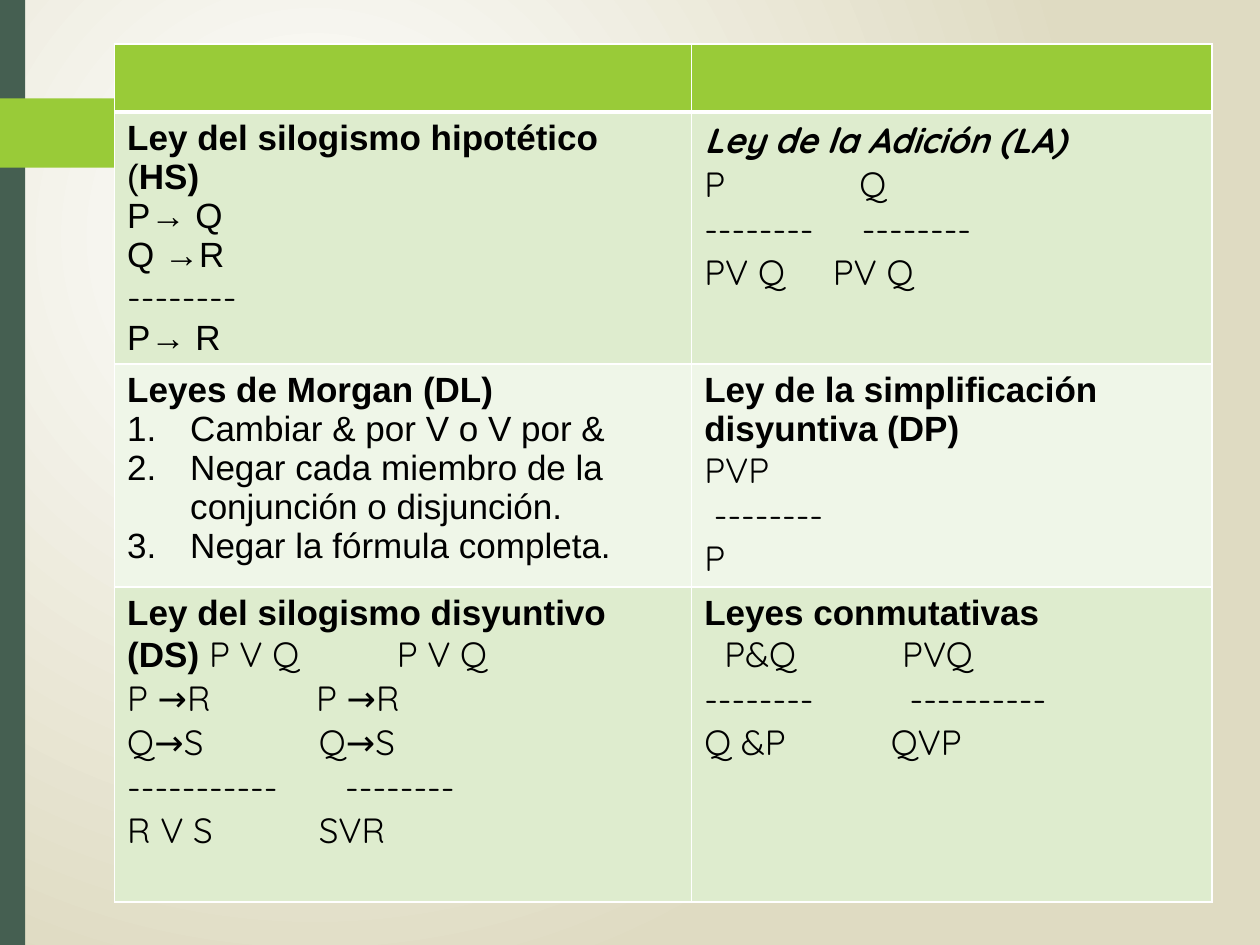
from dataclasses import dataclass

from lxml.etree import SubElement
from pptx import Presentation
from pptx.dml.color import RGBColor
from pptx.enum.shapes import MSO_SHAPE
from pptx.oxml import parse_xml
from pptx.oxml.ns import nsdecls, qn
from pptx.util import Inches, Pt

BLACK = RGBColor(0x00, 0x00, 0x00)
WHITE = RGBColor(0xFF, 0xFF, 0xFF)
SAND = RGBColor(0xDF, 0xDB, 0xC2)
DARK_GREEN = RGBColor(0x45, 0x5F, 0x51)
LIME = RGBColor(0x99, 0xCB, 0x38)
PALE_GREEN = RGBColor(0xDE, 0xEC, 0xCE)
PALEST_GREEN = RGBColor(0xEF, 0xF6, 0xE8)

TITLE = {"name": "Arial", "bold": True}
PLAIN = {"name": "Arial", "bold": False}
FORMULA = {"name": "Quicksand", "bold": False}
SLANTED_TITLE = {"name": "Quicksand", "bold": True, "italic": True}

COLUMN_WIDTHS = (4.58, 4.13)
ROW_HEIGHTS = (0.54, 2, 1.77, 2.5)
ROW_FILLS = (LIME, PALE_GREEN, PALEST_GREEN, PALE_GREEN)


@dataclass
class Line:
    """One paragraph: (text, font format) runs and tab stops in inches."""
    runs: list
    tabs: tuple = ()
    numbered: bool = False


def title(text):
    return Line([(text, TITLE)])


def plain(text):
    return Line([(text, PLAIN)])


def formula(text, *tabs):
    return Line([(text, FORMULA)], tabs)


def step(text):
    return Line([(text, PLAIN)], numbered=True)


LAWS = [
    [
        [Line([("Ley del silogismo hipotético ", TITLE), ("(", PLAIN), ("HS)", TITLE)]),
         plain("P→ Q"), plain("Q →R"), formula("--------"), plain("P→ R")],
        [Line([("Ley de la Adición (LA)", SLANTED_TITLE)]),
         formula("P\tQ", 1.23), formula("--------\t--------", 1.25),
         formula("PV Q\tPV Q", 1.02)],
    ],
    [
        [title("Leyes de Morgan (DL)"), step("Cambiar & por V o V por &"),
         step("Negar cada miembro de la conjunción o disjunción."),
         step("Negar la fórmula completa.")],
        [title("Ley de la simplificación disyuntiva (DP)"),
         formula("PVP"), formula(" --------"), formula("P")],
    ],
    [
        [Line([("Ley del silogismo disyuntivo (DS) ", TITLE),
               ("P V Q\tP V Q", FORMULA)], (2.14,)),
         formula("P →R\tP →R", 1.5), formula("Q→S\tQ→S", 1.52),
         formula("-----------\t--------", 1.73), formula("R V S\tSVR", 1.52)],
        [Line([("Leyes conmutativas\v", TITLE),
               ("\tP&Q\tPVQ", FORMULA)], (0.16, 1.57)),
         formula("--------\t----------", 1.63), formula("Q &P\tQVP", 1.48)],
    ],
]


def set_background(slide):
    fill = slide.background.fill
    fill.gradient()
    for stop, position, color in zip(fill.gradient_stops, (0, 1), (WHITE, SAND)):
        stop.position = position
        stop.color.rgb = color
    gradient = slide.background._cSld.find(".//" + qn("a:gradFill"))
    gradient.replace(gradient.find(qn("a:lin")), parse_xml(
        f'<a:path {nsdecls("a")} path="circle">'
        '<a:fillToRect l="50000" t="50000" r="100000" b="100000"/></a:path>'))


def paint(shape, color):
    shape.fill.solid()
    shape.fill.fore_color.rgb = color
    shape.line.fill.background()
    shape.shadow.inherit = False


def add_side_bar(slide):
    bar = slide.shapes.add_shape(
        MSO_SHAPE.RECTANGLE, 0, 0, Inches(0.2), Inches(7.5))
    paint(bar, DARK_GREEN)


def add_pointer(slide):
    start, *corners = [(Inches(x), Inches(y)) for x, y in (
        (0, 0.78), (1.21, 0.78), (1.24, 0.79), (1.49, 1.04),
        (1.49, 1.07), (1.24, 1.32), (1.21, 1.33), (0, 1.33))]
    builder = slide.shapes.build_freeform(*start)
    builder.add_line_segments(corners)
    paint(builder.convert_to_shape(), LIME)


def set_borders(cell, bottom, top):
    properties = cell._tc.get_or_add_tcPr()
    widths = {"lnL": 1, "lnR": 1, "lnT": top, "lnB": bottom}
    for tag, width in widths.items():
        border = SubElement(properties, qn(f"a:{tag}"), w=str(Pt(width)))
        fill = SubElement(border, qn("a:solidFill"))
        SubElement(fill, qn("a:srgbClr"), val=str(WHITE))


def format_paragraph(paragraph, line):
    properties = paragraph._p.get_or_add_pPr()
    if line.numbered:
        properties.set("marL", str(Inches(0.5)))
        properties.set("indent", str(Inches(-0.5)))
        SubElement(properties, qn("a:buFont"), typeface="+mj-lt")
        SubElement(properties, qn("a:buAutoNum"), type="arabicPeriod")
    if line.tabs:
        stops = SubElement(properties, qn("a:tabLst"))
        for position in line.tabs:
            SubElement(stops, qn("a:tab"), pos=str(Inches(position)), algn="l")


def add_runs(paragraph, line):
    for text, font_format in line.runs:
        for index, part in enumerate(text.split("\v")):
            if index:
                paragraph.add_line_break()
            if part:
                run = paragraph.add_run()
                run.text = part
                run.font.color.rgb = BLACK
                for name, value in {"size": Pt(20), **font_format}.items():
                    setattr(run.font, name, value)


def write_cell(cell, lines):
    frame = cell.text_frame
    for index, line in enumerate(lines):
        paragraph = frame.add_paragraph() if index else frame.paragraphs[0]
        format_paragraph(paragraph, line)
        add_runs(paragraph, line)


def add_law_table(slide):
    table = slide.shapes.add_table(
        len(ROW_HEIGHTS), len(COLUMN_WIDTHS), Inches(0.91), Inches(0.35),
        Inches(sum(COLUMN_WIDTHS)), Inches(sum(ROW_HEIGHTS))).table
    for column, width in zip(table.columns, COLUMN_WIDTHS):
        column.width = Inches(width)
    for index, (row, height) in enumerate(zip(table.rows, ROW_HEIGHTS)):
        row.height = Inches(height)
        for cell in row.cells:
            set_borders(cell, bottom=3 if index == 0 else 1,
                        top=3 if index == 1 else 1)
            cell.fill.solid()
            cell.fill.fore_color.rgb = ROW_FILLS[index]
    for row_index, laws in enumerate(LAWS, start=1):
        for column_index, lines in enumerate(laws):
            write_cell(table.cell(row_index, column_index), lines)


def main():
    presentation = Presentation()
    presentation.slide_width = Inches(10)
    presentation.slide_height = Inches(7.5)
    slide = presentation.slides.add_slide(presentation.slide_layouts[6])
    set_background(slide)
    add_side_bar(slide)
    add_pointer(slide)
    add_law_table(slide)
    presentation.save("out.pptx")


if __name__ == "__main__":
    main()
